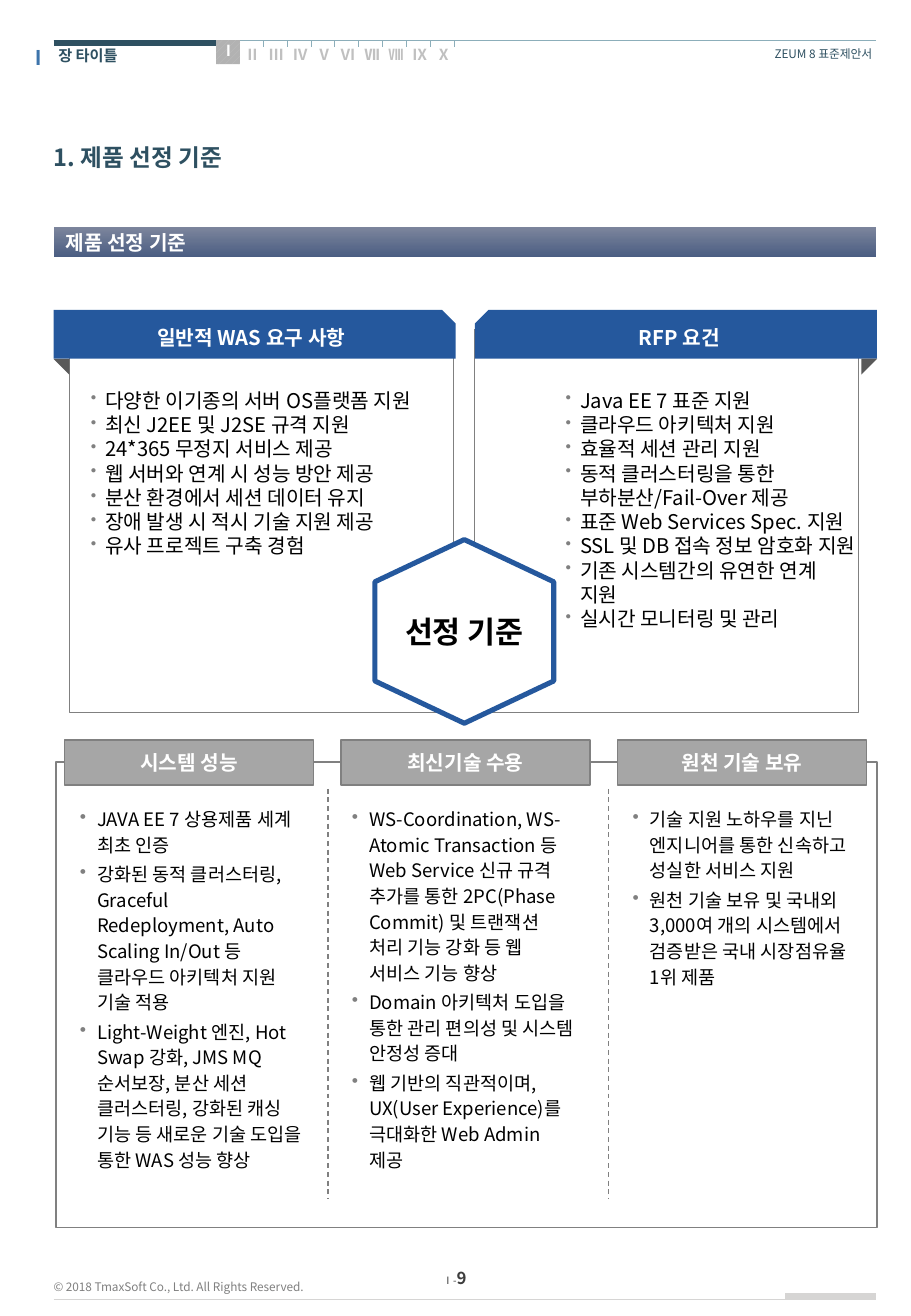
from dataclasses import dataclass

from lxml.etree import SubElement
from pptx import Presentation
from pptx.dml.color import RGBColor
from pptx.enum.dml import MSO_LINE, MSO_PATTERN
from pptx.enum.shapes import MSO_CONNECTOR, MSO_SHAPE
from pptx.enum.text import MSO_ANCHOR, PP_ALIGN
from pptx.oxml.ns import qn
from pptx.util import Cm, Pt


@dataclass(frozen=True)
class Theme:
    """Colours, type sizes and font of the slide."""
    font: str = "Noto Sans CJK KR"
    navy: str = "2E5061"
    blue: str = "25589D"
    mark: str = "3D74AB"
    rule: str = "8CAEBA"
    pale: str = "D6D5D4"
    dim: str = "C0C0C0"
    tab: str = "B2B2B2"
    head: str = "A6A6A6"
    grey: str = "808080"
    fold: str = "595959"
    ink: str = "3D3D3D"
    black: str = "000000"
    white: str = "FFFFFF"
    top: str = "7C859C"
    base: str = "4A5D82"
    tiny: int = 6
    note: int = 7
    small: int = 9
    page: int = 10
    list: int = 11
    body: int = 12
    title: int = 14
    hub: int = 18


T = Theme()
LEFT, MID, RIGHT = PP_ALIGN.LEFT, PP_ALIGN.CENTER, PP_ALIGN.RIGHT


def rgb(tone):
    """Turn a hex string into a colour."""
    return RGBColor.from_string(tone)


def bullet(para, indent, size):
    """Give a paragraph a hanging grey bullet."""
    props = para._p.get_or_add_pPr()
    props.set("marL", str(Cm(indent)))
    props.set("indent", str(-Cm(indent)))
    tone = SubElement(props, qn("a:buClr"))
    SubElement(tone, qn("a:srgbClr"), val=T.grey)
    SubElement(props, qn("a:buSzPct"), val=str(size * 1000))
    SubElement(props, qn("a:buChar"), char="•")


def write(shape, lines, size, tone, bold=False, align=LEFT, anchor=MSO_ANCHOR.TOP,
          pad=(0, 0, 0, 0), lead=1.2, gap=0, dot=None):
    """Fill a shape with paragraphs of one style."""
    frame = shape.text_frame
    frame.word_wrap = True
    frame.vertical_anchor = anchor
    frame.margin_left, frame.margin_top, frame.margin_right, frame.margin_bottom = map(Cm, pad)
    for i, line in enumerate(lines):
        para = frame.paragraphs[0] if i == 0 else frame.add_paragraph()
        para.text = line
        para.alignment = align
        para.line_spacing = Pt(round(size * lead, 1))
        para.space_after = Pt(gap)
        if dot:
            bullet(para, *dot)
        font = para.font
        font.name, font.size, font.bold = T.font, Pt(size), bold
        font.color.rgb = rgb(tone)
        SubElement(font._element, qn("a:ea"), typeface=T.font)
    return frame


def label(shapes, box, lines, size, tone, **style):
    """Add a text box."""
    return write(shapes.add_textbox(*map(Cm, box)), lines, size, tone, **style)


def paint(shape, fill=None, edge=None, width=0.75):
    """Set fill and outline and drop the shadow."""
    shape.shadow.inherit = False
    if fill:
        shape.fill.solid()
        shape.fill.fore_color.rgb = rgb(fill)
    if edge:
        shape.line.color.rgb = rgb(edge)
        shape.line.width = Pt(width)
    else:
        shape.line.fill.background()
    return shape


def block(shapes, kind, box, fill=None, edge=None):
    """Add a painted preset shape."""
    return paint(shapes.add_shape(kind, *map(Cm, box)), fill, edge)


def rule(shapes, x1, y1, x2, y2, tone, width, dash=None):
    """Add a straight line."""
    line = shapes.add_connector(MSO_CONNECTOR.STRAIGHT, *map(Cm, (x1, y1, x2, y2)))
    line.line.color.rgb = rgb(tone)
    line.line.width = Pt(width)
    if dash:
        line.line.dash_style = dash
    SubElement(line._element.spPr, qn("a:effectLst"))


def header(shapes, box, name, book):
    """Draw the running head with its chapter tabs."""
    x, y, w, h = box
    rule(shapes, x, y, x + w, y, T.rule, 0.3)
    rule(shapes, x, y + 0.05, x + 3.4, y + 0.05, T.navy, 3.5)
    label(shapes, (x - 0.56, y + 0.1, 0.5, h), ["Ⅰ"], T.body, T.mark, bold=True, align=MID)
    label(shapes, (x + 0.1, y + 0.13, 3.25, h), [name], T.small, T.navy, bold=True)
    label(shapes, (x + w - 4.08, y + 0.13, 4, h), [book], T.note, T.navy, align=RIGHT)
    tab = block(shapes, MSO_SHAPE.RECTANGLE, (x + 3.4, y, 0.5, 0.5))
    tab.fill.patterned()
    tab.fill.pattern = MSO_PATTERN.WIDE_UPWARD_DIAGONAL
    tab.fill.fore_color.rgb, tab.fill.back_color.rgb = rgb(T.dim), rgb(T.tab)
    for i, mark in enumerate("ⅠⅡⅢⅣⅤⅥⅦⅧⅨⅩ"):
        left = x + 3.5 + i * 0.5
        drop, tone = (0.1, T.dim) if i else (0.03, T.white)
        label(shapes, (left, y + drop, 0.45, 0.4), [mark], T.small, tone, bold=True)
        if i:
            rule(shapes, left - 0.1 + 0.48, y, left - 0.1 + 0.48, y + 0.15, T.rule, 0.3)


def footer(shapes, box, claim, part, page):
    """Draw the copyright line, page number and rules."""
    x, y, w, h = box
    label(shapes, (x, y, 6, 0.6), [claim], T.note, T.grey, anchor=MSO_ANCHOR.MIDDLE)
    frame = label(shapes, (x + 7.77, y - 0.1, 1.24, 0.6), [part], T.tiny, T.ink,
                  align=MID, anchor=MSO_ANCHOR.MIDDLE)
    run = frame.paragraphs[0].add_run()
    run.text = page
    run.font.size, run.font.bold = Pt(T.page), True
    rule(shapes, x, y + h, x + w, y + h, T.pale, 0.3)
    rule(shapes, x + w - 1.9, y + h - 0.05, x + w, y + h - 0.05, T.pale, 3.5)


def banner(shapes, box, name):
    """Draw the shaded section bar."""
    bar = block(shapes, MSO_SHAPE.RECTANGLE, box)
    bar.fill.gradient()
    bar.fill.gradient_angle = 270
    for stop, tone in zip(bar.fill.gradient_stops, (T.top, T.base)):
        stop.color.rgb = rgb(tone)
    write(bar, [name], T.body, T.white, bold=True, anchor=MSO_ANCHOR.MIDDLE, pad=(0.25, 0, 0.25, 0))


def panel(shapes, box, name, lines, inset, flip=False):
    """Draw a ribbon-headed panel with its list; flip mirrors it."""
    x, y, w, h = box
    fold, top = 0.33, 1.02
    block(shapes, MSO_SHAPE.RECTANGLE, (x if flip else x + fold, y + 0.41, w - fold - 0.05, h - 0.41),
          T.white, T.grey)
    head = block(shapes, MSO_SHAPE.SNIP_1_RECTANGLE, (x, y, w, top), T.blue)
    head.adjustments[0] = 0.28
    if flip:
        head._element.spPr.xfrm.set("flipH", "1")
    write(head, [name], T.body, T.white, bold=True, align=MID, anchor=MSO_ANCHOR.MIDDLE)
    wing = block(shapes, MSO_SHAPE.ISOSCELES_TRIANGLE,
                 (x + w - fold if flip else x, y + top, fold, fold), T.fold)
    wing.adjustments[0], wing.rotation = (0, 90) if flip else (1, 270)
    label(shapes, (x + inset, y + 1.5, w - inset - 0.2, h - 1.6), lines, T.body, T.black,
          pad=(0.25, 0.13, 0.25, 0.13), dot=(0.3, 80))


def hub(shapes, box, name):
    """Draw the central hexagon."""
    x, y, w, h = box
    low, high, mid = y + h * 0.23, y + h * 0.77, x + w / 2
    spots = [(x + w, low), (x + w, high), (mid, y + h), (x, high), (x, low)]
    path = shapes.build_freeform(Cm(mid), Cm(y))
    path.add_line_segments([(Cm(a), Cm(b)) for a, b in spots], close=True)
    paint(path.convert_to_shape(), T.white, T.blue, 3)
    label(shapes, box, [name], T.hub, T.black, bold=True, align=MID, anchor=MSO_ANCHOR.MIDDLE)


def columns(shapes, box, parts):
    """Draw the framed row of headed lists."""
    x, y, w, h = box
    block(shapes, MSO_SHAPE.RECTANGLE, box, T.white, T.grey)
    for i, (name, left, lines) in enumerate(parts):
        head = block(shapes, MSO_SHAPE.RECTANGLE, (x + 0.18 + i * 5.78, y - 0.46, 5.21, 0.94), T.head, T.grey)
        write(head, [name], T.body, T.white, bold=True, align=MID, anchor=MSO_ANCHOR.MIDDLE)
        label(shapes, (x + left, y + 0.66, 5.18, h - 0.8), lines, T.list, T.black,
              pad=(0.25, 0.23, 0.25, 0.13), lead=1.38, gap=2.2, dot=(0.36, 100))
    for cut in (5.69, 11.56):
        rule(shapes, x + cut, y + 0.56, x + cut, y + h - 0.6, T.grey, 0.75, MSO_LINE.DASH)


def main():
    """Build and save the slide."""
    deck = Presentation()
    deck.slide_width, deck.slide_height = Cm(19.05), Cm(27.51)
    shapes = deck.slides.add_slide(deck.slide_layouts[6]).shapes
    footer(shapes, (1.12, 26.59, 17.2, 0.56), "© 2018 TmaxSoft Co., Ltd. All Rights Reserved.", "Ⅰ-", "9")
    header(shapes, (1.12, 0.84, 17.2, 0.6), "장 타이틀", "ZEUM 8 표준제안서")
    label(shapes, (1.12, 2.84, 17.2, 0.79), ["1. 제품 선정 기준"], T.title, T.navy, bold=True, lead=1.5)
    banner(shapes, (1.12, 4.75, 17.2, 0.63), "제품 선정 기준")
    panel(shapes, (1.12, 6.48, 8.41, 8.41), "일반적 WAS 요구 사항", [
        "다양한 이기종의 서버 OS플랫폼 지원", "최신 J2EE 및 J2SE 규격 지원", "24*365 무정지 서비스 제공",
        "웹 서버와 연계 시 성능 방안 제공", "분산 환경에서 세션 데이터 유지",
        "장애 발생 시 적시 기술 지원 제공", "유사 프로젝트 구축 경험"], 0.53)
    panel(shapes, (9.93, 6.48, 8.41, 8.41), "RFP 요건", [
        "Java EE 7 표준 지원", "클라우드 아키텍처 지원", "효율적 세션 관리 지원",
        "동적 클러스터링을 통한 부하분산/Fail-Over 제공", "표준 Web Services Spec. 지원",
        "SSL 및 DB 접속 정보 암호화 지원", "기존 시스템간의 유연한 연계 지원",
        "실시간 모니터링 및 관리"], 1.65, flip=True)
    columns(shapes, (1.17, 15.93, 17.17, 9.73), [
        ("시스템 성능", 0.25, [
            "JAVA EE 7 상용제품 세계 최초 인증",
            "강화된 동적 클러스터링, Graceful Redeployment, Auto Scaling In/Out 등 클라우드 아키텍처 지원 기술 적용",
            "Light-Weight 엔진, Hot Swap 강화, JMS MQ 순서보장, 분산 세션 클러스터링, 강화된 캐싱 기능 등 "
            "새로운 기술 도입을 통한 WAS 성능 향상"]),
        ("최신기술 수용", 5.94, [
            "WS-Coordination, WS-Atomic Transaction 등 Web Service 신규 규격 추가를 통한 "
            "2PC(Phase Commit) 및 트랜잭션 처리 기능 강화 등 웹 서비스 기능 향상",
            "Domain 아키텍처 도입을 통한 관리 편의성 및 시스템 안정성 증대",
            "웹 기반의 직관적이며, UX(User Experience)를 극대화한 Web Admin 제공"]),
        ("원천 기술 보유", 11.81, [
            "기술 지원 노하우를 지닌 엔지니어를 통한 신속하고 성실한 서비스 지원",
            "원천 기술 보유 및 국내외 3,000여 개의 시스템에서 검증받은 국내 시장점유율 1위 제품"])])
    hub(shapes, (7.84, 11.28, 3.74, 3.84), "선정 기준")
    deck.save("out.pptx")


if __name__ == "__main__":
    main()
